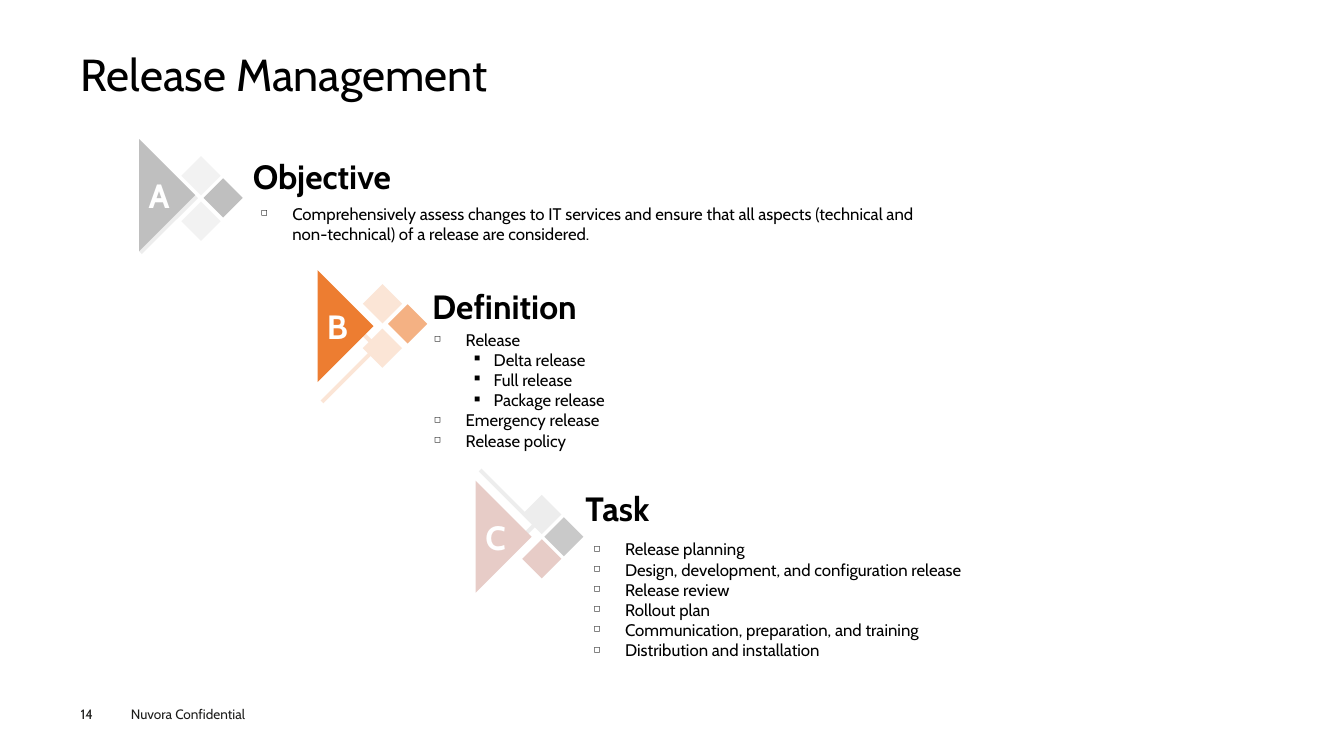
from lxml.etree import SubElement
from pptx import Presentation
from pptx.dml.color import RGBColor
from pptx.enum.shapes import MSO_SHAPE
from pptx.enum.text import MSO_ANCHOR, PP_ALIGN
from pptx.oxml.ns import qn
from pptx.util import Pt


def color(code):
    return RGBColor.from_string(code)


class Deck:
    face = "Cabin"
    ink = "000000"
    marks = [("◻", 22.5, -22.5), ("■", 42.5, -14)]

    def __init__(self, wide, high):
        self.file = Presentation()
        self.file.slide_width = Pt(wide)
        self.file.slide_height = Pt(high)
        self.slide = self.file.slides.add_slide(self.file.slide_layouts[6])

    def style(self, para, size, tint, bold=False):
        para.font.name = self.face
        para.font.size = Pt(size)
        para.font.bold = bold
        para.font.color.rgb = color(tint)

    def paint(self, shape, tint):
        shape.shadow.inherit = False
        shape.fill.solid()
        shape.fill.fore_color.rgb = color(tint)
        shape.line.fill.background()

    def frame(self, box, anchor=MSO_ANCHOR.TOP, inset=True):
        area = self.slide.shapes.add_textbox(*map(Pt, box)).text_frame
        area.word_wrap = True
        area.vertical_anchor = anchor
        if not inset:
            area.margin_left = area.margin_right = 0
            area.margin_top = area.margin_bottom = 0
        return area

    def label(self, text, box, size, tint=ink, bold=False,
              anchor=MSO_ANCHOR.TOP, inset=True, space=1.0):
        para = self.frame(box, anchor, inset).paragraphs[0]
        para.text = text
        para.line_spacing = space
        self.style(para, size, tint, bold)

    def bullets(self, items, box):
        area = self.frame(box)
        for index, (level, text) in enumerate(items):
            para = area.add_paragraph() if index else area.paragraphs[0]
            para.text = text
            para.level = level
            mark, left, hang = self.marks[level]
            props = para._p.get_or_add_pPr()
            props.set("marL", str(Pt(left)))
            props.set("indent", str(Pt(hang)))
            SubElement(props, qn("a:buSzPct")).set("val", "50000")
            SubElement(props, qn("a:buChar")).set("char", mark)
            self.style(para, 12, self.ink)

    def diamond(self, left, top, tint):
        box = map(Pt, (left, top, 28, 28))
        self.paint(self.slide.shapes.add_shape(MSO_SHAPE.DIAMOND, *box), tint)

    def outline(self, left, top, points, tint):
        spots = [(Pt(left + x), Pt(top + y)) for x, y in points]
        maker = self.slide.shapes.build_freeform(*spots[0])
        maker.add_line_segments(spots[1:], close=True)
        shape = maker.convert_to_shape()
        self.paint(shape, tint)
        return shape

    def arrow(self, letter, left, top, tint):
        shape = self.outline(left, top, [(0, 0), (40, 40), (0, 80)], tint)
        area = shape.text_frame
        area.margin_left = area.margin_top = area.margin_bottom = 0
        area.margin_right = Pt(11.5)
        area.vertical_anchor = MSO_ANCHOR.MIDDLE
        para = area.paragraphs[0]
        para.text = letter
        para.alignment = PP_ALIGN.CENTER
        self.style(para, 24, "FFFFFF", True)

    def emblem(self, letter, left, top, back, gems, tints):
        for (x, y), tint in zip(gems, tints):
            self.diamond(x, y, tint)
        band = [(2, 0), (42, 40), (2, 80), (0, 78), (38, 40), (0, 2)]
        self.outline(left + back[0], top + back[1], band, tints[3])
        self.arrow(letter, left, top, tints[4])

    def save(self):
        self.file.save("out.pptx")


def main():
    deck = Deck(960, 540)
    deck.label("Nuvora Confidential", (86.4, 500.4, 115, 19.4), 9.7, "1D1D1B")
    deck.label("14", (57.6, 504, 39.6, 11.5), 9.7, "1D1D1B", inset=False)
    deck.label("Release Management", (57.6, 35.3, 844.6, 38.9), 32,
               anchor=MSO_ANCHOR.MIDDLE, inset=False, space=0.9)

    parts = [
        ("A", "Objective", (99.4, 99.4), (0, 2.1),
         [(129.6, 111.6), (129.6, 144), (145.4, 127.4)],
         ["F2F2F2", "F2F2F2", "BFBFBF", "EDEDED", "BFBFBF"],
         (173.5, 101.5), (179.3, 141.8, 489.6, 37.4),
         [(0, "Comprehensively assess changes to IT services and ensure that "
              "all aspects (technical and non-technical) of a release are "
              "considered.")]),
        ("C", "Task", (339.8, 343.4), (2.2, -8.6),
         [(373, 353.5), (373, 385.2), (388.8, 369.4)],
         ["EDEDED", "E7CCC7", "C9C9C9", "EDEDED", "E7CCC7"],
         (411.1, 338.4), (416.9, 381.6, 406.8, 82.8),
         [(0, "Release planning"),
          (0, "Design, development, and configuration release"),
          (0, "Release review"),
          (0, "Rollout plan"),
          (0, "Communication, preparation, and training"),
          (0, "Distribution and installation")]),
        ("B", "Definition", (226.8, 193), (2.2, 15.1),
         [(259.2, 203), (259.2, 234.7), (277.2, 217.4)],
         ["FBE5D6", "FBE5D6", "F4B183", "FBE5D6", "ED7D31"],
         (301.7, 194.4), (303.1, 231.8, 551.5, 133.9),
         [(0, "Release"),
          (1, "Delta release"),
          (1, "Full release"),
          (1, "Package release"),
          (0, "Emergency release"),
          (0, "Release policy")]),
    ]
    for letter, head, spot, back, gems, tints, place, box, items in parts:
        deck.emblem(letter, *spot, back, gems, tints)
        deck.bullets(items, box)
        deck.label(head, (*place, 275.8, 42.5), 24, bold=True,
                   anchor=MSO_ANCHOR.BOTTOM)
    deck.save()


if __name__ == "__main__":
    main()
